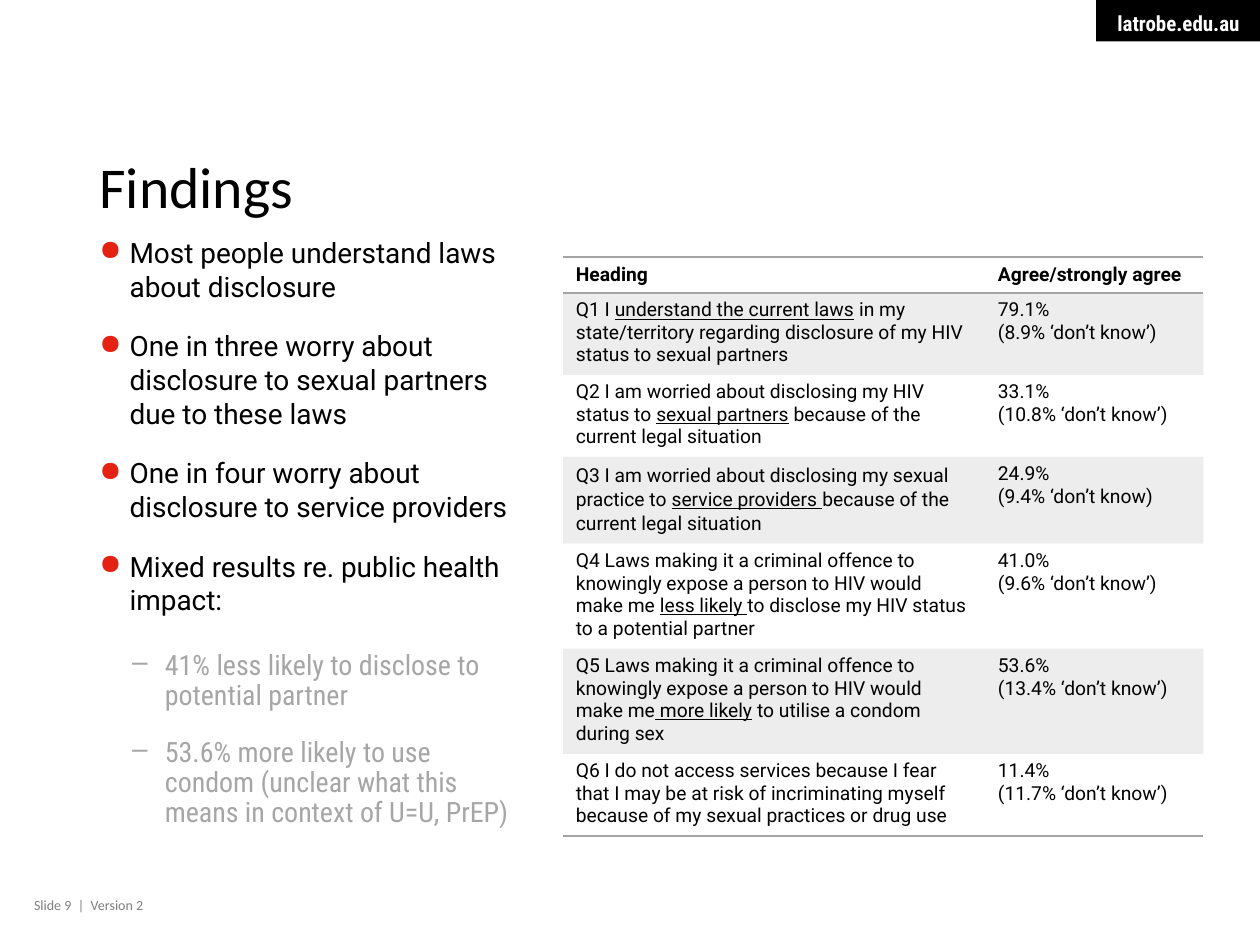
import pptx
import pptx.dml.color
import pptx.enum.shapes
import pptx.enum.text
import pptx.oxml
import pptx.oxml.ns
import pptx.util
from pptx.util import Inches

BLACK = pptx.dml.color.RGBColor(0x00, 0x00, 0x00)
WHITE = pptx.dml.color.RGBColor(0xFF, 0xFF, 0xFF)
RED = pptx.dml.color.RGBColor(0xE5, 0x22, 0x12)
RULE_GREY = pptx.dml.color.RGBColor(0xA5, 0xA5, 0xA5)
DETAIL_GREY = pptx.dml.color.RGBColor(0xA6, 0xA6, 0xA6)
FOOTER_GREY = pptx.dml.color.RGBColor(0x7F, 0x7F, 0x7F)

FINDINGS = [
    "Most people understand laws about disclosure",
    "One in three worry about disclosure to sexual partners due to these laws",
    "One in four worry about disclosure to service providers",
    "Mixed results re. public health impact:",
]
IMPACTS = [
    "41% less likely to disclose to potential partner",
    "53.6% more likely to use condom (unclear what this means in context of U=U, PrEP)",
]
RESPONSES = [
    (0.28, "Heading", ["Agree/strongly agree"]),
    (0.64, "Q1 I _understand the current laws_ in my state/territory regarding "
           "disclosure of my HIV status to sexual partners",
     ["79.1%", "(8.9% ‘don’t know’)"]),
    (0.64, "Q2 I am worried about disclosing my HIV status to _sexual partners_ "
           "because of the current legal situation",
     ["33.1%", "(10.8% ‘don’t know’)"]),
    (0.67, "Q3 I am worried about disclosing my sexual practice to "
           "_service providers _because of the current legal situation",
     ["24.9%", "(9.4% ‘don’t know)"]),
    (0.83, "Q4 Laws making it a criminal offence to knowingly expose a person to HIV "
           "would make me _less likely _to disclose my HIV status to a potential partner",
     ["41.0%", "(9.6% ‘don’t know’)"]),
    (0.66, "Q5 Laws making it a criminal offence to knowingly expose a person to HIV "
           "would make me_ more likely_ to utilise a condom during sex",
     ["53.6%", "(13.4% ‘don’t know’)"]),
    (0.64, "Q6 I do not access services because I fear that I may be at risk of "
           "incriminating myself because of my sexual practices or drug use",
     ["11.4%", "(11.7% ‘don’t know’)"]),
]


def append_xml(parent, tag, attributes="", content=""):
    namespace = pptx.oxml.ns.nsdecls("a")
    parent.append(pptx.oxml.parse_xml(
        f"<a:{tag} {namespace} {attributes}>{content}</a:{tag}>"))


def write(frame, text, size=11, font="Roboto", color=BLACK, bold=False, align=None,
          spacing=None, before=None, after=None, bullet=None, bullet_color=None,
          level=0, indent=0, hanging=0):
    first = frame.paragraphs[0]
    paragraph = frame.add_paragraph() if first.runs else first
    paragraph.level = level
    paragraph.alignment = align
    paragraph.line_spacing = spacing
    if before is not None:
        paragraph.space_before = pptx.util.Pt(before)
    if after is not None:
        paragraph.space_after = pptx.util.Pt(after)
    if bullet:
        properties = paragraph._p.get_or_add_pPr()
        properties.set("marL", str(Inches(indent)))
        properties.set("indent", str(-Inches(hanging)))
        if bullet_color:
            append_xml(properties, "buClr", content=f'<a:srgbClr val="{bullet_color}"/>')
        append_xml(properties, "buChar", f'char="{bullet}"')
    for position, part in enumerate(text.split("_")):
        run = paragraph.add_run()
        run.text = part
        run.font.size = pptx.util.Pt(size)
        run.font.name = font
        run.font.bold = bold
        run.font.underline = position % 2 == 1
        run.font.color.rgb = color


class FindingsSlide:
    """Holds the heading style and the slide being built."""

    heading_font = "Calibri"
    condensed_font = "Roboto Condensed"

    def __init__(self, deck):
        self.slide = deck.slides.add_slide(deck.slide_layouts[6])

    def text_box(self, left, top, width, height, margin_left=0.1):
        frame = self.slide.shapes.add_textbox(
            Inches(left), Inches(top), Inches(width), Inches(height)).text_frame
        frame.word_wrap = True
        frame.margin_left = Inches(margin_left)
        return frame

    def site_tag(self, address):
        tag = self.slide.shapes.add_shape(
            pptx.enum.shapes.MSO_SHAPE.RECTANGLE,
            Inches(8.7), 0, Inches(1.3), Inches(0.33))
        tag.shadow.inherit = False
        tag.fill.solid()
        tag.fill.fore_color.rgb = BLACK
        tag.line.fill.background()
        frame = tag.text_frame
        frame.word_wrap = False
        frame.vertical_anchor = pptx.enum.text.MSO_ANCHOR.TOP
        frame.margin_left = frame.margin_right = Inches(0.16)
        frame.margin_top = Inches(0.08)
        write(frame, address, size=12, font=self.condensed_font, color=WHITE,
              bold=True, align=pptx.enum.text.PP_ALIGN.RIGHT)

    def footer(self, text):
        write(self.text_box(0.27, 7.07, 2.69, 0.24, margin_left=0), text,
              size=8, font=self.heading_font, color=FOOTER_GREY)

    def title(self, text):
        frame = self.text_box(0.69, 0.78, 8.62, 1.45)
        frame.vertical_anchor = pptx.enum.text.MSO_ANCHOR.MIDDLE
        write(frame, text, size=33, font=self.heading_font, spacing=0.9)

    def bullets(self, findings, impacts):
        frame = self.text_box(0.69, 1.82, 3.45, 2.61)
        for finding in findings:
            write(frame, finding, size=16, after=15, bullet="●", bullet_color=RED,
                  indent=0.24, hanging=0.24)
        for impact in impacts:
            write(frame, impact, size=16, font=self.condensed_font, color=DETAIL_GREY,
                  spacing=0.9, before=5, after=10, bullet="–", level=1,
                  indent=0.52, hanging=0.26)

    def style_cell(self, cell, ruled_sides, shaded):
        properties = cell._tc.get_or_add_tcPr()
        for side in "LRTB":
            line = "<a:noFill/>"
            if side in ruled_sides:
                line = f'<a:solidFill><a:srgbClr val="{RULE_GREY}"/></a:solidFill>'
            append_xml(properties, f"ln{side}", f'w="{pptx.util.Pt(1)}"', line)
        if shaded:
            cell.fill.solid()
            cell.fill.fore_color.rgb = RULE_GREY
            fill = properties.find(pptx.oxml.ns.qn("a:solidFill"))
            append_xml(fill[0], "alpha", 'val="20000"')
        else:
            cell.fill.background()

    def response_table(self, responses):
        table = self.slide.shapes.add_table(
            len(responses), 2, Inches(4.47), Inches(2.04),
            Inches(5.08), Inches(4.36)).table
        table.first_row = table.horz_banding = False
        for column, width in zip(table.columns, (3.35, 1.73)):
            column.width = Inches(width)
        last = len(responses) - 1
        for index, (height, question, answers) in enumerate(responses):
            table.rows[index].height = Inches(height)
            ruled_sides = ("T" if index < 2 else "") + ("B" if index in (0, last) else "")
            for column, lines in enumerate(([question], answers)):
                cell = table.cell(index, column)
                self.style_cell(cell, ruled_sides, shaded=index % 2 == 1)
                for line in lines:
                    write(cell.text_frame, line, bold=index == 0,
                          spacing=1.07 if line.startswith("Q3") else None)


def main():
    deck = pptx.Presentation()
    deck.slide_width, deck.slide_height = Inches(10), Inches(7.5)
    findings = FindingsSlide(deck)
    findings.site_tag("latrobe.edu.au")
    findings.footer("Slide 9  |  Version 2")
    findings.title("Findings")
    findings.response_table(RESPONSES)
    findings.bullets(FINDINGS, IMPACTS)
    deck.save("out.pptx")


if __name__ == "__main__":
    main()
